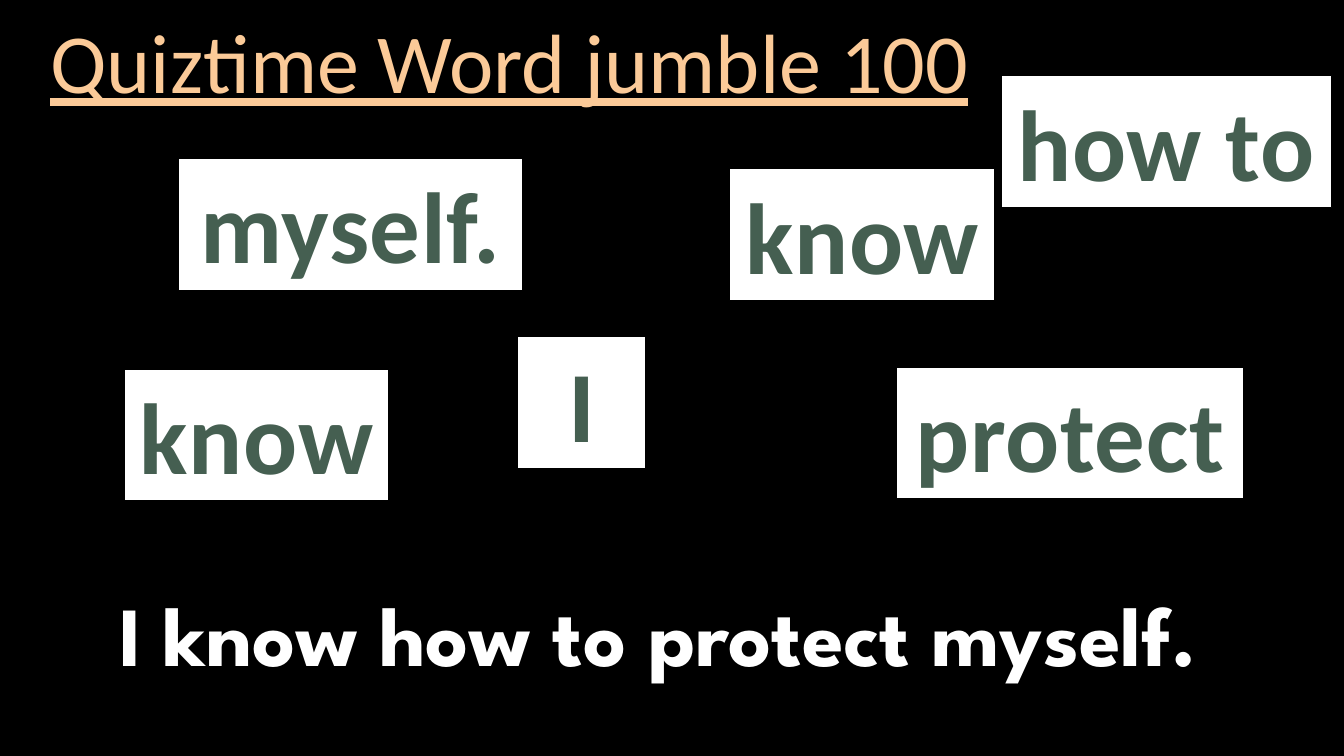
from dataclasses import dataclass

from pptx import Presentation
from pptx.dml.color import RGBColor
from pptx.enum.shapes import MSO_SHAPE
from pptx.enum.text import MSO_ANCHOR, MSO_AUTO_SIZE, PP_ALIGN
from pptx.util import Inches, Pt

SLIDE_WIDTH = Inches(13.33)
SLIDE_HEIGHT = Inches(7.5)


@dataclass(frozen=True)
class Theme:
    background: RGBColor = RGBColor(0x00, 0x00, 0x00)
    title: RGBColor = RGBColor(0xFB, 0xCA, 0x98)
    tile: RGBColor = RGBColor(0xFF, 0xFF, 0xFF)
    word: RGBColor = RGBColor(0x45, 0x5F, 0x51)
    answer: RGBColor = RGBColor(0xFF, 0xFF, 0xFF)
    body_font: str = "Calibri"
    answer_font: str = "League Spartan"
    heading_size: int = 60
    word_size: int = 72
    word_spacing: int = 50  # hundredths of a point


THEME = Theme()

# Word tiles: text, then left, top and width in percent of the slide
TILE_HEIGHT = 17.47
WORD_TILES = [
    ("myself.", 13.28, 20.93, 25.65),
    ("know", 54.3, 22.27, 19.73),
    ("I", 38.48, 44.53, 9.6),
    ("protect", 66.68, 48.53, 25.88),
    ("know", 9.23, 48.8, 19.73),
    ("how to", 74.48, 10, 24.6),
]


def area(left, top, width, height):
    """Turn percentages of the slide into lengths."""
    return (
        int(SLIDE_WIDTH * left / 100),
        int(SLIDE_HEIGHT * top / 100),
        int(SLIDE_WIDTH * width / 100),
        int(SLIDE_HEIGHT * height / 100),
    )


def write(shape, text, font_name, size, color, alignment):
    """Fill a shape with one styled line and return its run."""
    shape.text_frame.text = text
    paragraph = shape.text_frame.paragraphs[0]
    paragraph.alignment = alignment
    run = paragraph.runs[0]
    run.font.name = font_name
    run.font.size = Pt(size)
    run.font.color.rgb = color
    return run


def add_title(slide, text):
    box = slide.shapes.add_textbox(*area(3, 2.13, 85.43, 13.2))
    box.text_frame.word_wrap = True
    box.text_frame.vertical_anchor = MSO_ANCHOR.MIDDLE
    run = write(box, text, THEME.body_font, THEME.heading_size,
                THEME.title, PP_ALIGN.LEFT)
    run.font.underline = True
    box.text_frame.paragraphs[0].line_spacing = 0.9


def add_word_tile(slide, word, left, top, width):
    tile = slide.shapes.add_shape(
        MSO_SHAPE.RECTANGLE, *area(left, top, width, TILE_HEIGHT))
    tile.shadow.inherit = False
    tile.fill.solid()
    tile.fill.fore_color.rgb = THEME.tile
    tile.line.color.rgb = THEME.background
    tile.line.width = Pt(1)
    tile.text_frame.word_wrap = len(word) == 1
    tile.text_frame.auto_size = MSO_AUTO_SIZE.SHAPE_TO_FIT_TEXT
    tile.text_frame.vertical_anchor = MSO_ANCHOR.TOP
    run = write(tile, word, THEME.body_font, THEME.word_size,
                THEME.word, PP_ALIGN.CENTER)
    run.font.bold = True
    run.font._element.set("spc", str(THEME.word_spacing))


def add_answer(slide, text):
    box = slide.shapes.add_textbox(*area(1.35, 76.4, 95.25, 14.8))
    box.text_frame.word_wrap = True
    box.text_frame.auto_size = MSO_AUTO_SIZE.SHAPE_TO_FIT_TEXT
    run = write(box, text, THEME.answer_font, THEME.heading_size,
                THEME.answer, PP_ALIGN.CENTER)
    run.font.bold = True


def main():
    presentation = Presentation()
    presentation.slide_width = SLIDE_WIDTH
    presentation.slide_height = SLIDE_HEIGHT
    slide = presentation.slides.add_slide(presentation.slide_layouts[6])

    # Background
    slide.background.fill.solid()
    slide.background.fill.fore_color.rgb = THEME.background

    # Heading, jumbled words and the solved sentence
    add_title(slide, "Quiztime Word jumble 100")
    for word_tile in WORD_TILES:
        add_word_tile(slide, *word_tile)
    add_answer(slide, "I know how to protect myself.")

    presentation.save("out.pptx")


if __name__ == "__main__":
    main()
